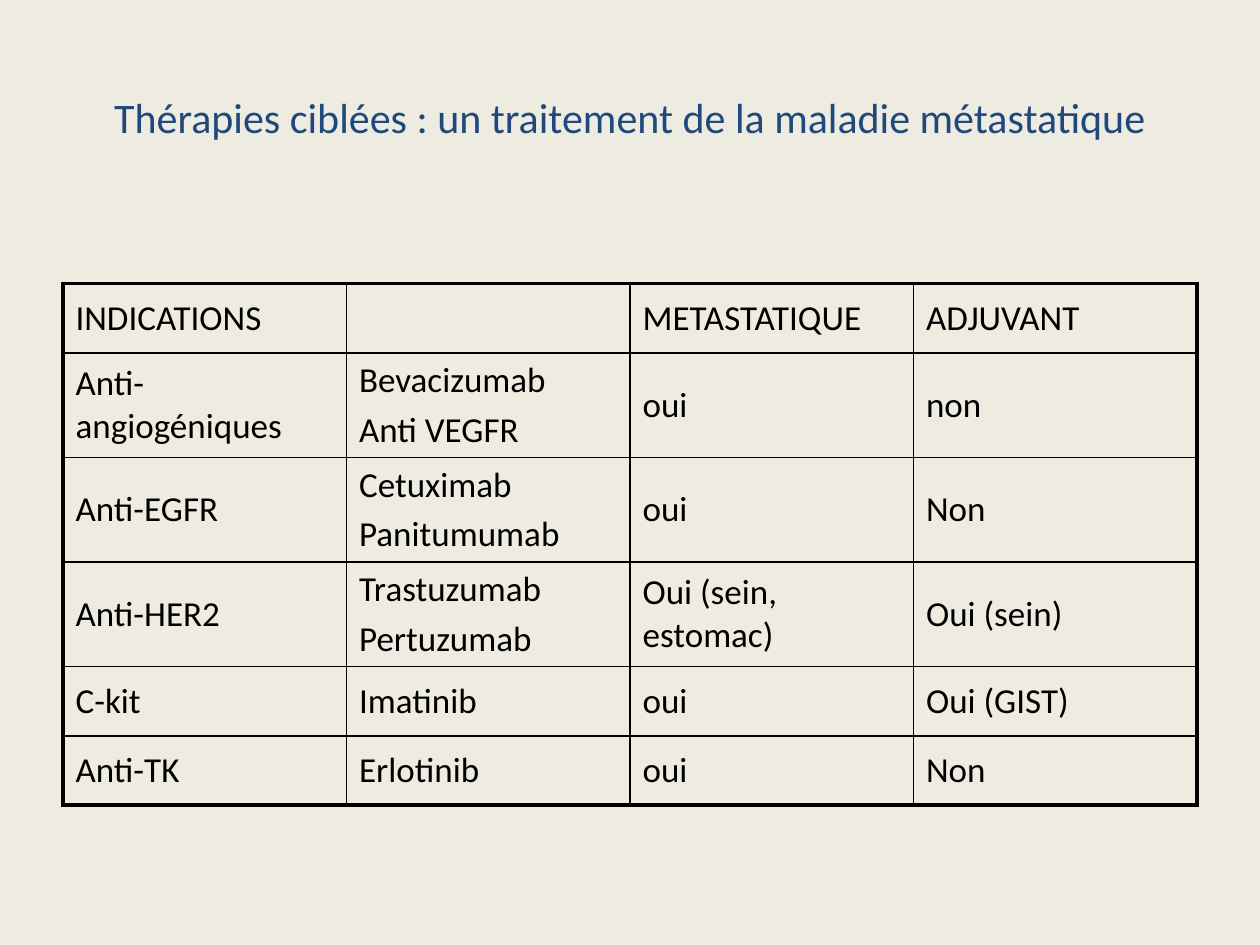
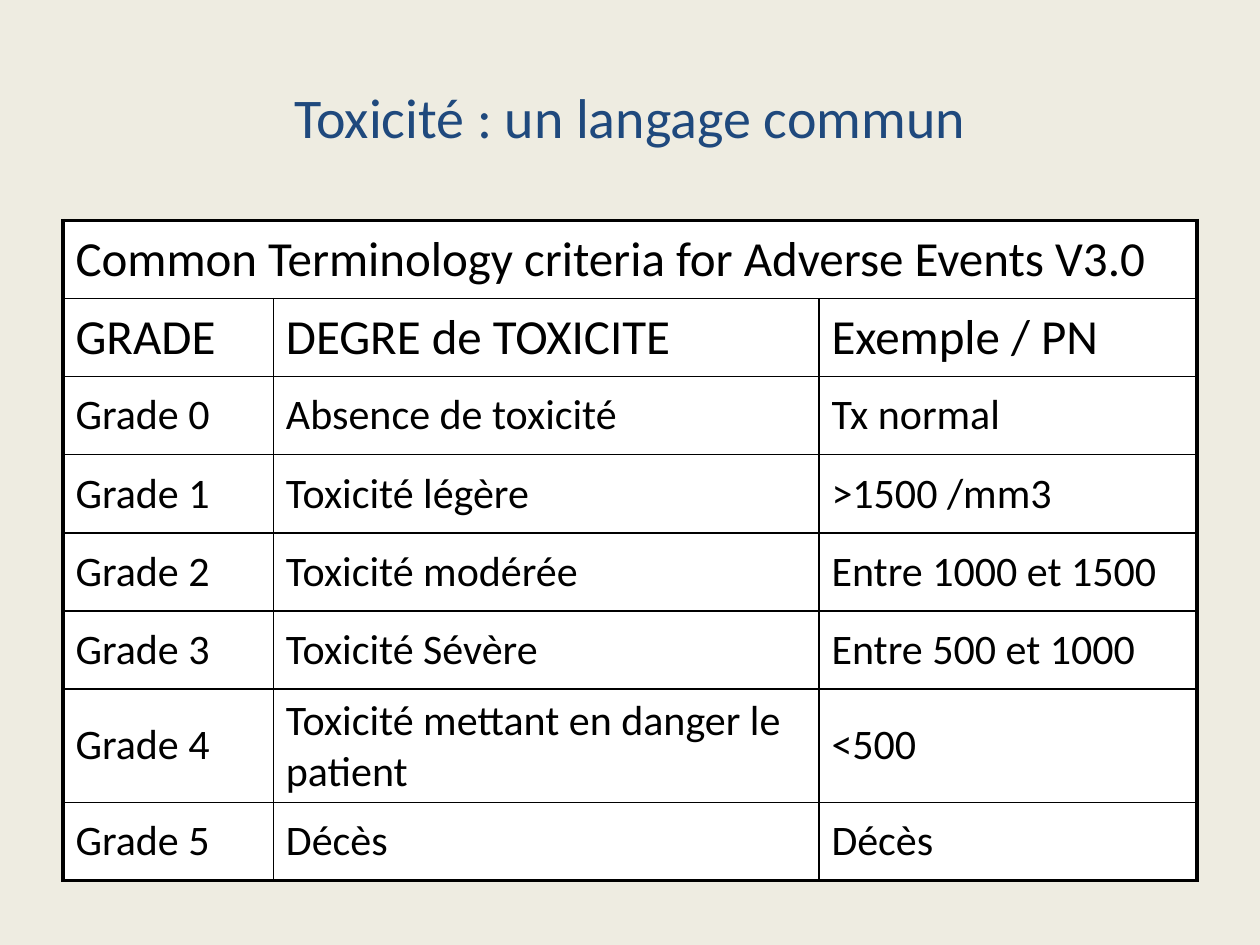
from lxml.etree import SubElement
from pptx import Presentation
from pptx.dml.color import RGBColor
from pptx.enum.text import MSO_ANCHOR, PP_ALIGN
from pptx.oxml.ns import qn
from pptx.util import Inches, Pt

CREAM = RGBColor(0xEE, 0xEC, 0xE1)
NAVY = RGBColor(0x1F, 0x49, 0x7D)
BLACK = RGBColor(0, 0, 0)
WHITE = RGBColor(0xFF, 0xFF, 0xFF)
FONT = "Calibri"
LEFT, WIDTH = 0.5, 9
INNER_LINE, OUTER_LINE = 1, 2.25

# A line break inside a cell starts a new paragraph
THERAPIES = [
    ["INDICATIONS", "", "METASTATIQUE", "ADJUVANT"],
    ["Anti-angiogéniques", "Bevacizumab\nAnti VEGFR", "oui", "non"],
    ["Anti-EGFR", "Cetuximab\nPanitumumab", "oui", "Non"],
    ["Anti-HER2", "Trastuzumab\nPertuzumab", "Oui (sein, estomac)", "Oui (sein)"],
    ["C-kit", "Imatinib", "oui", "Oui (GIST)"],
    ["Anti-TK", "Erlotinib", "oui", "Non"],
]
GRADES = [
    ["Common Terminology criteria for Adverse Events V3.0", "", ""],
    ["GRADE", "DEGRE de TOXICITE", "Exemple / PN"],
    ["Grade 0", "Absence de toxicité", "Tx normal"],
    ["Grade 1", "Toxicité légère", ">1500 /mm3"],
    ["Grade 2", "Toxicité modérée", "Entre 1000 et 1500"],
    ["Grade 3", "Toxicité Sévère", "Entre 500 et 1000"],
    ["Grade 4", "Toxicité mettant en danger le patient", "<500"],
    ["Grade 5", "Décès", "Décès"],
]


def format_runs(paragraph, size, color):
    for run in paragraph.runs:
        run.font.name = FONT
        run.font.size = Pt(size)
        run.font.color.rgb = color


def add_titled_slide(presentation, title, size):
    slide = presentation.slides.add_slide(presentation.slide_layouts[6])
    slide.background.fill.solid()
    slide.background.fill.fore_color.rgb = CREAM
    title_box = slide.shapes.add_textbox(
        Inches(LEFT), Inches(0.3), Inches(WIDTH), Inches(1.25))
    text_frame = title_box.text_frame
    text_frame.word_wrap = True
    text_frame.vertical_anchor = MSO_ANCHOR.MIDDLE
    text_frame.text = title
    paragraph = text_frame.paragraphs[0]
    paragraph.alignment = PP_ALIGN.CENTER
    format_runs(paragraph, size, NAVY)
    return slide


def set_borders(cell, outer_sides):
    properties = cell._tc.get_or_add_tcPr()
    for side in "LRTB":
        width = OUTER_LINE if side in outer_sides else INNER_LINE
        line = SubElement(properties, qn(f"a:ln{side}"), w=str(Pt(width)))
        fill = SubElement(line, qn("a:solidFill"))
        SubElement(fill, qn("a:srgbClr"), val=str(BLACK))


def set_space_before(paragraph, percent):
    spacing = SubElement(paragraph._p.get_or_add_pPr(), qn("a:spcBef"))
    SubElement(spacing, qn("a:spcPct"), val=str(percent * 1000))


def fill_cell(cell, text, size, fill_color):
    if fill_color is None:
        cell.fill.background()
    else:
        cell.fill.solid()
        cell.fill.fore_color.rgb = fill_color
    cell.vertical_anchor = MSO_ANCHOR.MIDDLE
    cell.text_frame.text = text
    for paragraph in cell.text_frame.paragraphs:
        set_space_before(paragraph, 20)
        format_runs(paragraph, size, BLACK)


def add_framed_table(slide, top, rows, column_widths, row_heights, row_sizes,
                     fill_color=None):
    """Table with thin inner lines and a heavy outer frame."""
    table = slide.shapes.add_table(
        len(rows), len(column_widths), Inches(LEFT), Inches(top),
        Inches(WIDTH), Inches(sum(row_heights))).table
    table.first_row = False
    table.horz_banding = False
    for column, width in zip(table.columns, column_widths):
        column.width = Inches(width)
    for row, height in zip(table.rows, row_heights):
        row.height = Inches(height)

    last_row, last_column = len(rows) - 1, len(column_widths) - 1
    for row_index, texts in enumerate(rows):
        for column_index, text in enumerate(texts):
            cell = table.cell(row_index, column_index)
            on_edge = {"L": column_index == 0, "R": column_index == last_column,
                       "T": row_index == 0, "B": row_index == last_row}
            set_borders(cell, [side for side, outer in on_edge.items() if outer])
            fill_cell(cell, text, row_sizes[row_index], fill_color)
    return table


def build_therapies_slide(presentation):
    slide = add_titled_slide(
        presentation,
        "Thérapies ciblées : un traitement de la maladie métastatique", 24)
    add_framed_table(slide, 2.25, THERAPIES, [WIDTH / 4] * 4,
                     [0.55] + [0.83] * 3 + [0.55] * 2, [20] * len(THERAPIES))


def build_toxicity_slide(presentation):
    slide = add_titled_slide(presentation, "Toxicité : un langage commun", 32)
    table = add_framed_table(slide, 1.75, GRADES, [1.67, 4.33, 3],
                             [0.62] * 6 + [0.9, 0.62], [28] * 2 + [24] * 6, WHITE)
    # The heading spans all columns, so its right edge is the frame
    heading = table.cell(0, 0)
    heading.merge(table.cell(0, 2))
    heading._tc.tcPr.find(qn("a:lnR")).set("w", str(Pt(OUTER_LINE)))


def main():
    presentation = Presentation()
    presentation.slide_width = Inches(10)
    presentation.slide_height = Inches(7.5)
    build_therapies_slide(presentation)
    build_toxicity_slide(presentation)
    presentation.save("out.pptx")


if __name__ == "__main__":
    main()
